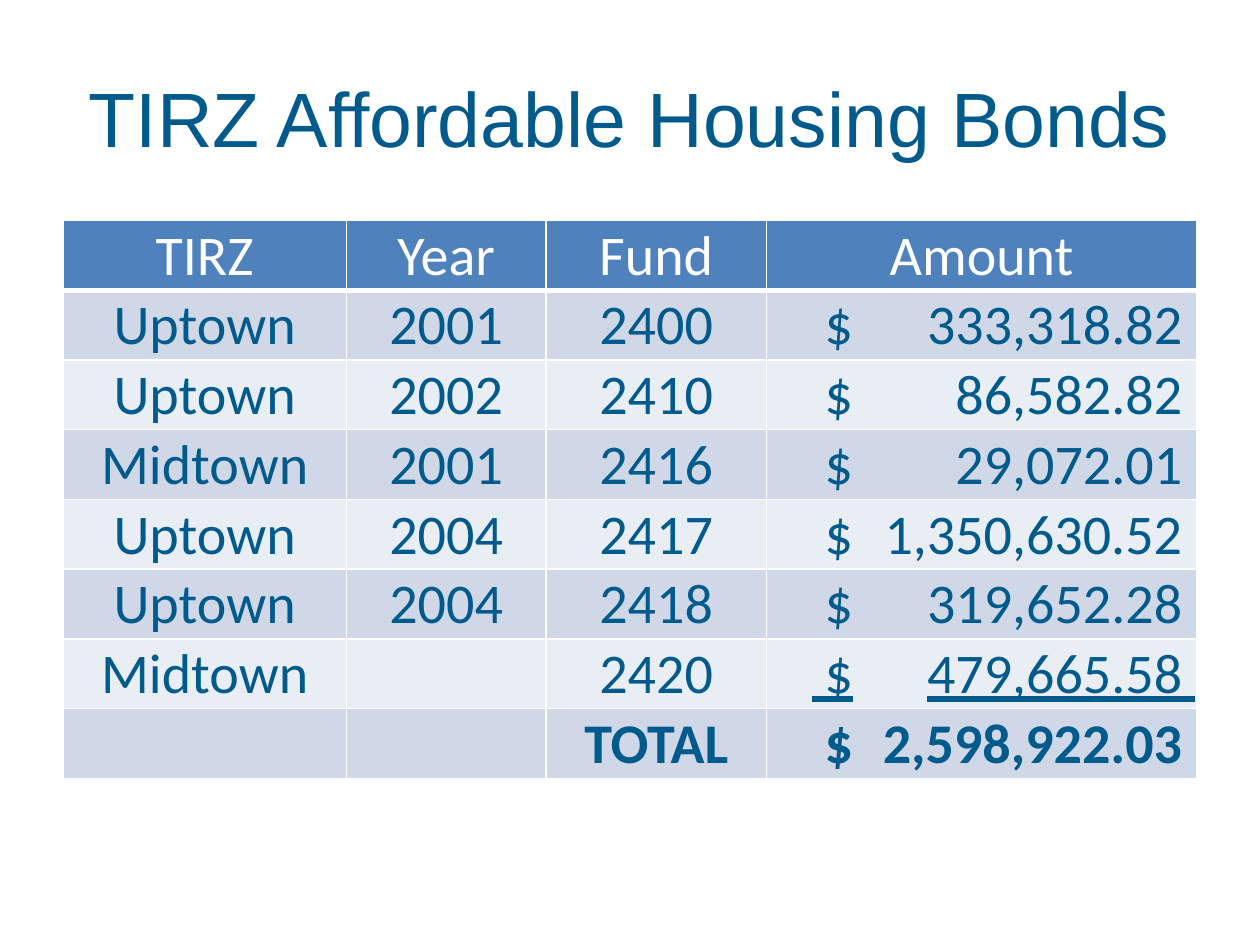
from dataclasses import dataclass

from lxml.etree import SubElement
from pptx import Presentation
from pptx.dml.color import RGBColor
from pptx.enum.text import MSO_ANCHOR, PP_ALIGN
from pptx.oxml.ns import qn
from pptx.util import Pt

NAVY = RGBColor(0x00, 0x5A, 0x8B)
WHITE = RGBColor(0xFF, 0xFF, 0xFF)
HEADER_BLUE = RGBColor(0x4F, 0x81, 0xBD)
BAND_DARK = RGBColor(0xD0, 0xD8, 0xE8)
BAND_LIGHT = RGBColor(0xE9, 0xED, 0xF4)

COLUMN_WIDTHS = (162, 114, 126, 246)
ROW_HEIGHT = 39
AMOUNT_INDENT = 26
AMOUNT_TAB = 219
CELL_MARGIN = 0.72


@dataclass(frozen=True)
class Bond:
    zone: str
    year: str
    fund: str
    amount: str
    underline: bool = False
    bold: bool = False


BONDS = (
    Bond("Uptown", "2001", "2400", "333,318.82"),
    Bond("Uptown", "2002", "2410", "86,582.82"),
    Bond("Midtown", "2001", "2416", "29,072.01"),
    Bond("Uptown", "2004", "2417", "1,350,630.52"),
    Bond("Uptown", "2004", "2418", "319,652.28"),
    Bond("Midtown", "", "2420", "479,665.58", underline=True),
    Bond("", "", "TOTAL", "2,598,922.03", bold=True),
)


def format_cell(cell, fill: RGBColor, top: float = 1, bottom: float = 1) -> None:
    properties = cell._tc.get_or_add_tcPr()
    for side, width in (("L", 1), ("R", 1), ("T", top), ("B", bottom)):
        line = SubElement(properties, qn(f"a:ln{side}"), w=str(Pt(width)))
        line_fill = SubElement(line, qn("a:solidFill"))
        SubElement(line_fill, qn("a:srgbClr"), val=str(WHITE))
    cell.fill.solid()
    cell.fill.fore_color.rgb = fill
    cell.vertical_anchor = MSO_ANCHOR.BOTTOM
    cell.margin_left = cell.margin_right = cell.margin_top = Pt(CELL_MARGIN)
    cell.margin_bottom = Pt(0)


def add_text(paragraph, text: str, color: RGBColor, size: float = 32,
             font: str = "Calibri", bold: bool = False, underline: bool = False,
             alignment=PP_ALIGN.CENTER) -> None:
    paragraph.alignment = alignment
    run = paragraph.add_run()
    run.text = text
    run.font.name = font
    run.font.size = Pt(size)
    run.font.bold = bold
    run.font.underline = underline
    run.font.color.rgb = color


def add_amount(cell, bond: Bond) -> None:
    cell.margin_left = Pt(AMOUNT_INDENT)
    paragraph = cell.text_frame.paragraphs[0]
    tabs = SubElement(paragraph._p.get_or_add_pPr(), qn("a:tabLst"))
    SubElement(tabs, qn("a:tab"), pos=str(Pt(AMOUNT_TAB)), algn="r")
    add_text(paragraph, f" $\t{bond.amount} ", NAVY, bold=bond.bold,
             underline=bond.underline, alignment=PP_ALIGN.LEFT)


def add_bond_table(slide) -> None:
    row_count = len(BONDS) + 1
    table = slide.shapes.add_table(
        row_count, len(COLUMN_WIDTHS), Pt(36), Pt(126),
        Pt(sum(COLUMN_WIDTHS)), Pt(ROW_HEIGHT * row_count)).table
    for column, width in zip(table.columns, COLUMN_WIDTHS):
        column.width = Pt(width)
    for row in table.rows:
        row.height = Pt(ROW_HEIGHT)

    for cell, heading in zip(table.rows[0].cells, ("TIRZ", "Year", "Fund", "Amount")):
        format_cell(cell, HEADER_BLUE, bottom=3)
        add_text(cell.text_frame.paragraphs[0], heading, WHITE)

    for row_index, bond in enumerate(BONDS, start=1):
        cells = list(table.rows[row_index].cells)
        for cell in cells:
            format_cell(cell, BAND_DARK if row_index % 2 else BAND_LIGHT,
                        top=3 if row_index == 1 else 1)
        for cell, text in zip(cells, (bond.zone, bond.year, bond.fund)):
            if text:
                add_text(cell.text_frame.paragraphs[0], text, NAVY, bold=bond.bold)
        add_amount(cells[-1], bond)


def main() -> None:
    presentation = Presentation()
    presentation.slide_width, presentation.slide_height = Pt(720), Pt(540)
    slide = presentation.slides.add_slide(presentation.slide_layouts[5])
    title = slide.shapes.title
    title.left, title.top, title.width, title.height = Pt(36), Pt(21.6), Pt(648), Pt(90)
    title.text_frame.vertical_anchor = MSO_ANCHOR.MIDDLE
    add_text(title.text_frame.paragraphs[0], "TIRZ Affordable Housing Bonds",
             NAVY, size=44, font="Arial")
    add_bond_table(slide)
    presentation.save("out.pptx")


if __name__ == "__main__":
    main()
